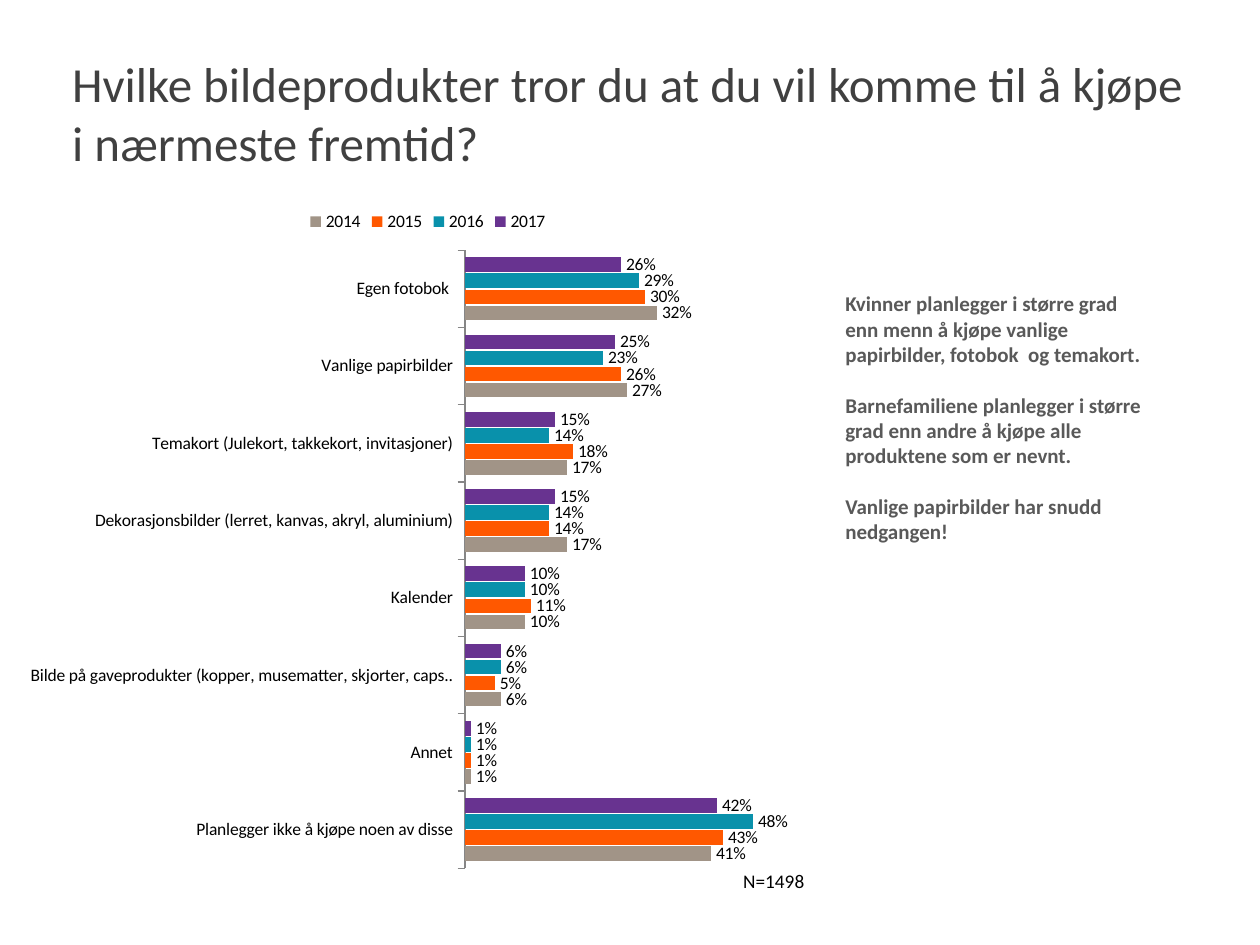
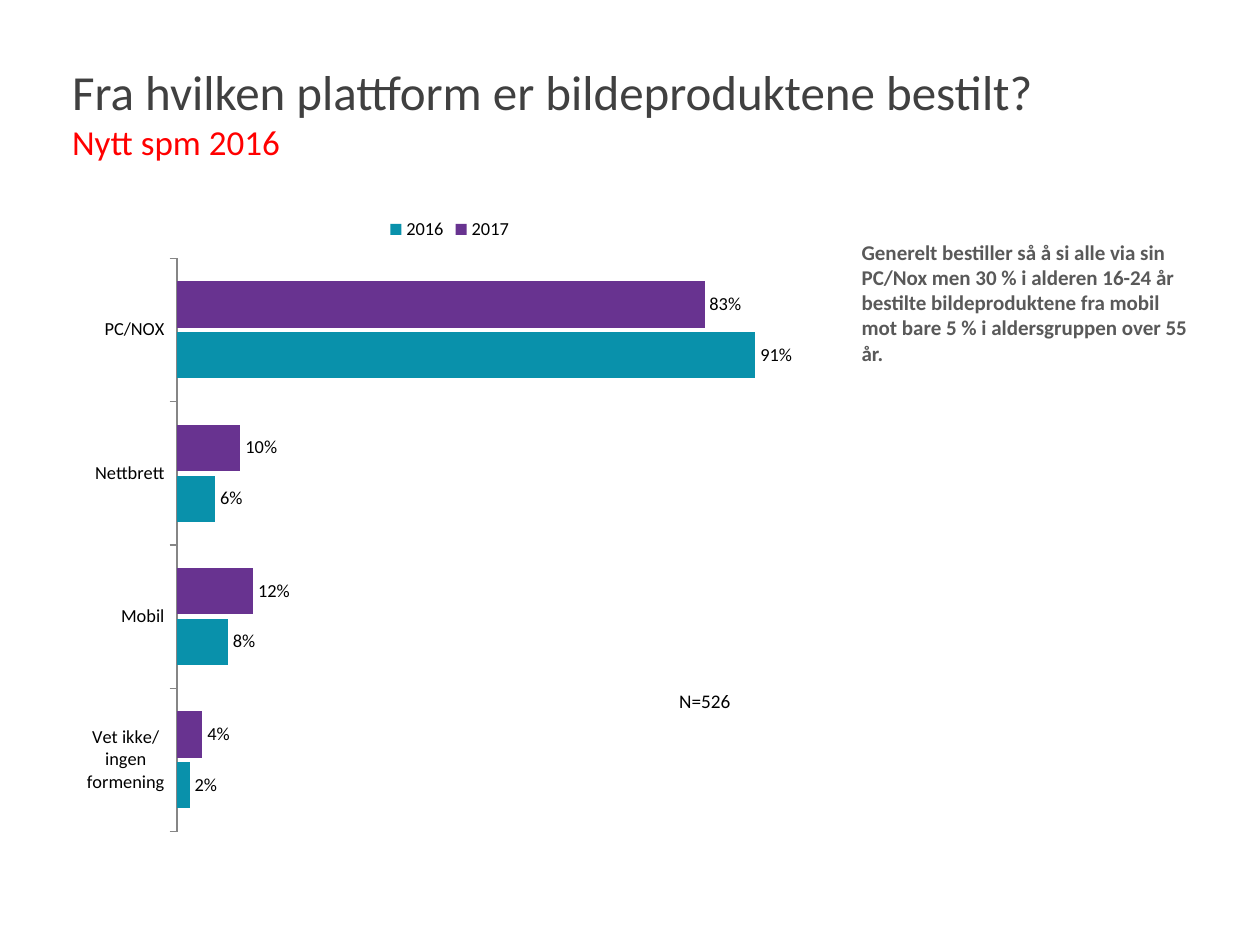
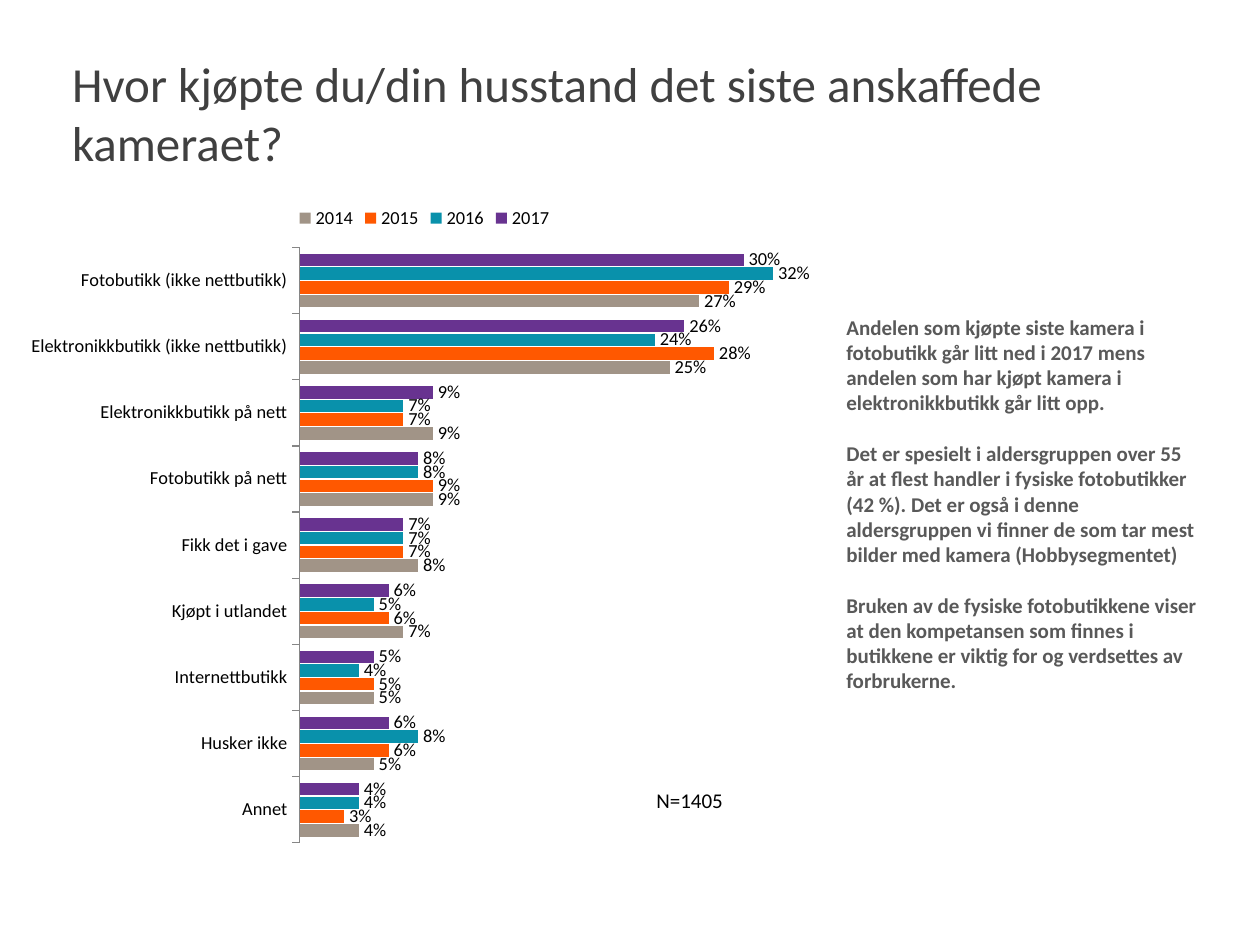
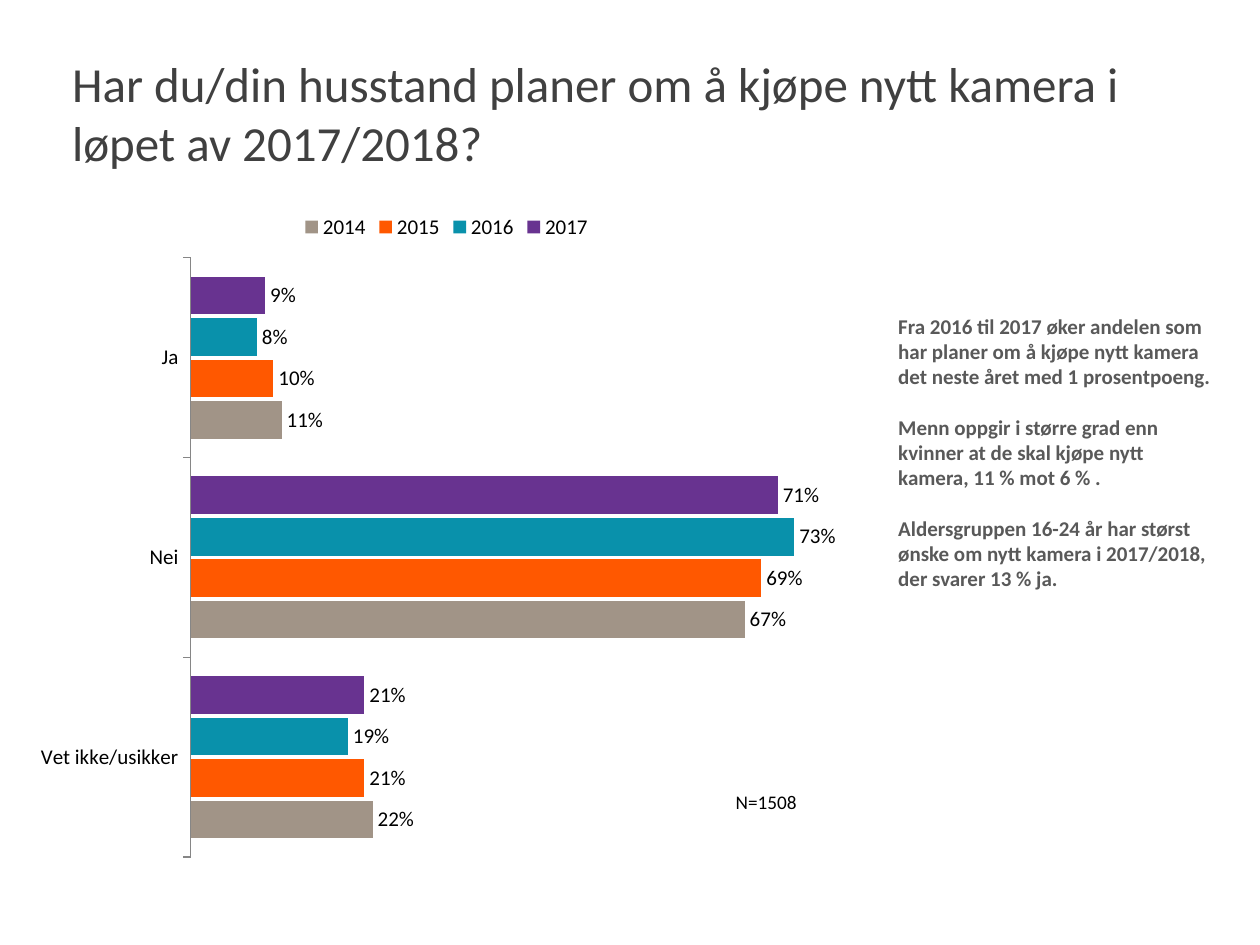
import dataclasses

import pptx
import pptx.chart.data
import pptx.dml.color
import pptx.enum.chart
import pptx.enum.text
import pptx.util

Pt = pptx.util.Pt
RGB = pptx.dml.color.RGBColor.from_string


@dataclasses.dataclass(frozen=True)
class Theme:
    font = "Calibri"
    title = RGB("404040")
    subtitle = RGB("FF0000")
    comment = RGB("595959")
    label = RGB("000000")
    axis = RGB("868686")
    years = {
        "2017": RGB("683390"),
        "2016": RGB("0991AB"),
        "2015": RGB("FF5800"),
        "2014": RGB("A19487"),
    }
    title_size = Pt(28)
    subtitle_size = Pt(20)
    comment_size = Pt(12)
    comment_gap = Pt(14.65)


theme = Theme()

questions = [
    {
        "title": "Hvilke bildeprodukter tror du at du vil komme til å kjøpe i nærmeste fremtid?",
        "subtitle": None,
        "chart_box": (8, 113, 473, 391),
        "chart_size": 10,
        "answers": {
            "Egen fotobok ": (26, 29, 30, 32),
            "Vanlige papirbilder": (25, 23, 26, 27),
            "Temakort (Julekort, takkekort, invitasjoner)": (15, 14, 18, 17),
            "Dekorasjonsbilder (lerret, kanvas, akryl, aluminium)": (15, 14, 14, 17),
            "Kalender": (10, 10, 11, 10),
            "Bilde på gaveprodukter (kopper, musematter, skjorter, caps..": (6, 6, 5, 6),
            "Annet": (1, 1, 1, 1),
            "Planlegger ikke å kjøpe noen av disse": (42, 48, 43, 41),
        },
        "sample": "N=1498",
        "sample_box": (417.6, 493.2, 50, 21),
        "sample_size": 11,
        "comments": [
            "Kvinner planlegger i større grad enn menn å kjøpe vanlige papirbilder, fotobok  og temakort.",
            "Barnefamiliene planlegger i større grad enn andre å kjøpe alle produktene som er nevnt.",
            "Vanlige papirbilder har snudd nedgangen!",
        ],
        "comment_box": (476, 162.7, 186, 225),
    },
    {
        "title": "Fra hvilken plattform er bildeproduktene bestilt?",
        "subtitle": "Nytt spm 2016",
        "chart_box": (41, 116.6, 432, 366),
        "chart_size": 10.5,
        "answers": {
            "PC/NOX": (83, 91),
            "Nettbrett": (10, 6),
            "Mobil": (12, 8),
            "Vet ikke/ingen formening": (4, 2),
        },
        "sample": "N=526",
        "sample_box": (381, 390.2, 45, 21),
        "sample_size": 11,
        "comments": [
            "Generelt bestiller så å si alle via sin PC/Nox men 30 % i alderen 16-24 år bestilte "
            "bildeproduktene fra mobil mot bare 5 % i aldersgruppen over 55 år.",
        ],
        "comment_box": (485.3, 133.2, 205, 109),
    },
    {
        "title": "Hvor kjøpte du/din husstand det siste anskaffede kameraet?",
        "subtitle": None,
        "chart_box": (8.6, 110.2, 468, 379),
        "chart_size": 10.5,
        "answers": {
            "Fotobutikk (ikke nettbutikk)": (30, 32, 29, 27),
            "Elektronikkbutikk (ikke nettbutikk)": (26, 24, 28, 25),
            "Elektronikkbutikk på nett": (9, 7, 7, 9),
            "Fotobutikk på nett": (8, 8, 9, 9),
            "Fikk det i gave": (7, 7, 7, 8),
            "Kjøpt i utlandet": (6, 5, 6, 7),
            "Internettbutikk": (5, 4, 5, 5),
            "Husker ikke": (6, 8, 6, 5),
            "Annet": (4, 4, 3, 4),
        },
        "sample": "N=1405",
        "sample_box": (368, 446.4, 53, 22),
        "sample_size": 12,
        "comments": [
            "Andelen som kjøpte siste kamera i fotobutikk går litt ned i 2017 mens andelen som har "
            "kjøpt kamera i elektronikkbutikk går litt opp.",
            "Det er spesielt i aldersgruppen over 55 år at flest handler i fysiske fotobutikker (42 %). "
            "Det er også i denne aldersgruppen vi finner de som tar mest bilder med kamera (Hobbysegmentet)",
            "Bruken av de fysiske fotobutikkene viser at den kompetansen som finnes i butikkene er "
            "viktig for og verdsettes av forbrukerne.",
        ],
        "comment_box": (476.6, 176.1, 215.3, 313),
    },
    {
        "title": "Har du/din husstand planer om å kjøpe nytt kamera i løpet av 2017/2018?",
        "subtitle": None,
        "chart_box": (13.7, 114.5, 483, 383),
        "chart_size": 12,
        "answers": {
            "Ja": (9, 8, 10, 11),
            "Nei": (71, 73, 69, 67),
            "Vet ikke/usikker": (21, 19, 21, 22),
        },
        "sample": "N=1508",
        "sample_box": (413.3, 447.8, 50, 21),
        "sample_size": 11,
        "comments": [
            "Fra 2016 til 2017 øker andelen som har planer om å kjøpe nytt kamera det neste året "
            "med 1 prosentpoeng.",
            "Menn oppgir i større grad enn kvinner at de skal kjøpe nytt kamera, 11 % mot 6 % .",
            "Aldersgruppen 16-24 år har størst ønske om nytt kamera i 2017/2018, der svarer 13 % ja.",
        ],
        "comment_box": (506.2, 175.4, 196.6, 269),
    },
]


def set_values(target, **values):
    for name, value in values.items():
        setattr(target, name, value)


def set_font(font, size, color, bold=False):
    set_values(font, name=theme.font, size=size, bold=bold)
    font.color.rgb = color


deck = pptx.Presentation()
set_values(deck, slide_width=Pt(720), slide_height=Pt(540))
title_only = deck.slide_layouts[5]

for question in questions:
    slide = deck.slides.add_slide(title_only)

    heading = slide.shapes.title
    set_values(heading, left=Pt(34), top=Pt(43.2), width=Pt(650), height=Pt(41.8))
    set_values(
        heading.text_frame,
        word_wrap=True,
        auto_size=pptx.enum.text.MSO_AUTO_SIZE.NONE,
        vertical_anchor=pptx.enum.text.MSO_ANCHOR.MIDDLE,
    )
    heading_line = heading.text_frame.paragraphs[0]
    heading_line.alignment = pptx.enum.text.PP_ALIGN.LEFT
    wording = heading_line.add_run()
    wording.text = question["title"]
    set_font(wording.font, theme.title_size, theme.title)
    if question["subtitle"]:
        heading_line.add_line_break()
        subtitle = heading_line.add_run()
        subtitle.text = question["subtitle"]
        set_font(subtitle.font, theme.subtitle_size, theme.subtitle)

    shares = pptx.chart.data.CategoryChartData(number_format="0%")
    shares.categories = list(question["answers"])
    for year, percents in zip(theme.years, zip(*question["answers"].values())):
        shares.add_series(year, [percent / 100 for percent in percents])
    chart = slide.shapes.add_chart(
        pptx.enum.chart.XL_CHART_TYPE.BAR_CLUSTERED, *map(Pt, question["chart_box"]), shares
    ).chart
    set_values(chart, has_title=False, has_legend=True)
    set_font(chart.font, Pt(question["chart_size"]), theme.label)
    set_values(
        chart.legend,
        position=pptx.enum.chart.XL_LEGEND_POSITION.TOP,
        include_in_layout=False,
    )
    set_values(
        chart.category_axis,
        reverse_order=True,
        has_major_gridlines=False,
        major_tick_mark=pptx.enum.chart.XL_TICK_MARK.OUTSIDE,
    )
    chart.category_axis.format.line.color.rgb = theme.axis
    set_values(chart.value_axis, visible=False, has_major_gridlines=False, minimum_scale=0)
    bars = chart.plots[0]
    set_values(bars, gap_width=100, overlap=-10, vary_by_categories=False)
    for series in bars.series:
        series.format.fill.solid()
        series.format.fill.fore_color.rgb = theme.years[series.name]
        set_values(
            series.data_labels,
            show_value=True,
            number_format="0%",
            number_format_is_linked=False,
            position=pptx.enum.chart.XL_LABEL_POSITION.OUTSIDE_END,
        )

    sample = slide.shapes.add_textbox(*map(Pt, question["sample_box"])).text_frame
    set_values(sample, word_wrap=False, text=question["sample"])
    set_font(sample.paragraphs[0].runs[0].font, Pt(question["sample_size"]), theme.label)

    comments = slide.shapes.add_textbox(*map(Pt, question["comment_box"])).text_frame
    set_values(comments, word_wrap=True, text="\n".join(question["comments"]))
    for position, comment in enumerate(comments.paragraphs):
        if position:
            comment.space_before = theme.comment_gap
        set_font(comment.runs[0].font, theme.comment_size, theme.comment, bold=True)

deck.save("out.pptx")
